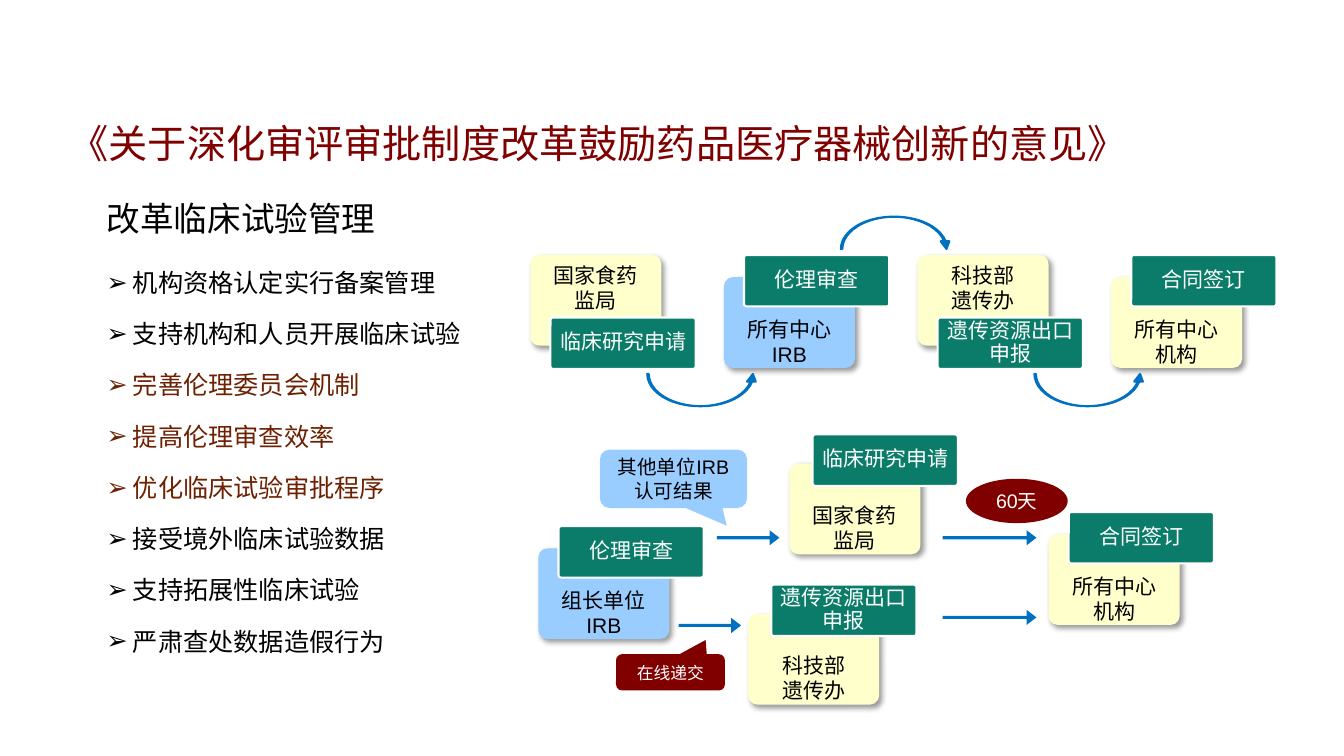
from lxml.etree import SubElement
from pptx import Presentation
from pptx.dml.color import RGBColor
from pptx.enum.shapes import MSO_SHAPE as Preset
from pptx.enum.text import MSO_ANCHOR as Anchor, PP_ALIGN as Align
from pptx.oxml.ns import qn
from pptx.util import Emu, Pt

PX = 9144  # 100 px to the inch
COLORS = {
    "maroon": "800000",
    "brown": "6D2102",
    "black": "000000",
    "white": "FFFFFF",
    "cream": "FFFFCC",
    "sky": "99CCFF",
    "teal": "0A7C69",
    "blue": "0070C0",
}
CARD_SIZE = (130, 90)
LABEL_SIZE = (144, 51)
LABEL_BELOW = (20, 62)
LABEL_ABOVE = (20, -22)
LABEL_HIGH = (23, -29)

MEASURES = [
    ("机构资格认定实行备案管理", "black"),
    ("支持机构和人员开展临床试验", "black"),
    ("完善伦理委员会机制", "brown"),
    ("提高伦理审查效率", "brown"),
    ("优化临床试验审批程序", "brown"),
    ("接受境外临床试验数据", "black"),
    ("支持拓展性临床试验", "black"),
    ("严肃查处数据造假行为", "black"),
]
CURRENT_STEPS = [
    (["国家食药", "监局"], ["临床研究申请"], "cream", LABEL_BELOW),
    (["所有中心IRB"], ["伦理审查"], "sky", LABEL_ABOVE),
    (["科技部", "遗传办"], ["遗传资源出口", "申报"], "cream", LABEL_BELOW),
    (["所有中心", "机构"], ["合同签订"], "cream", LABEL_ABOVE),
]
REFORMED_STEPS = [
    (534, 544, ["组长单位IRB"], ["伦理审查"], "sky", LABEL_ABOVE),
    (783, 460, ["国家食药", "监局"], ["临床研究申请"], "cream", LABEL_HIGH),
    (742, 609, ["科技部", "遗传办"], ["遗传资源出口", "申报"], "cream", LABEL_HIGH),
    (1040, 530, ["所有中心", "机构"], ["合同签订"], "cream", LABEL_ABOVE),
]


def rgb(color):
    return RGBColor.from_string(COLORS[color])


def box(*lengths):
    return [Emu(length * PX) for length in lengths]


def set_frame(frame, margins, anchor=Anchor.TOP):
    """Margins are left, top, right, bottom in px."""
    frame.word_wrap = True
    frame.vertical_anchor = anchor
    (frame.margin_left, frame.margin_top,
     frame.margin_right, frame.margin_bottom) = box(*margins)


def add_text(frame, text, size=15, color="black", font="Arial", align=Align.CENTER,
             before=0, after=0, spacing=1.0, bullet=None):
    """Fill the empty first paragraph, or add a further one."""
    paragraph = frame.add_paragraph() if frame.text else frame.paragraphs[0]
    paragraph.alignment = align
    paragraph.space_before, paragraph.space_after = Pt(before), Pt(after)
    paragraph.line_spacing = spacing
    if bullet:
        properties = paragraph._p.get_or_add_pPr()
        properties.set("marL", str(26 * PX))
        properties.set("indent", str(-26 * PX))
        SubElement(properties, qn("a:buFont"), typeface="Arial")
        SubElement(properties, qn("a:buChar"), char=bullet)
    run = paragraph.add_run()
    run.text = text
    run.font.size, run.font.bold, run.font.name = Pt(size), False, font
    run.font.color.rgb = rgb(color)
    SubElement(run._r.get_or_add_rPr(), qn("a:ea"), typeface=font)


def add_preset(slide, preset, bounds, fill, line=None, adjust=()):
    shape = slide.shapes.add_shape(preset, *box(*bounds))
    shape.shadow.inherit = False
    shape.fill.solid()
    shape.fill.fore_color.rgb = rgb(fill)
    if line:
        shape.line.color.rgb = rgb(line)
        shape.line.width = Pt(1.5)
    else:
        shape.line.fill.background()
    for index, value in enumerate(adjust):
        shape.adjustments[index] = value
    return shape


def cast_shadow(shape):
    effects = shape._element.spPr.find(qn("a:effectLst"))
    shadow = SubElement(effects, qn("a:outerShdw"), blurRad=str(Pt(4)), dist=str(Pt(3)),
                        dir=str(45 * 60000), algn="tl", rotWithShape="0")
    color = SubElement(shadow, qn("a:srgbClr"), val=COLORS["black"])
    SubElement(color, qn("a:alpha"), val="40000")


def add_step(slide, left, top, office, task, fill, label_offset):
    """A card for the office with the label of its task on the edge."""
    card = add_preset(slide, Preset.ROUNDED_RECTANGLE, (left, top, *CARD_SIZE), fill,
                      adjust=[0.1])
    cast_shadow(card)
    top_margin = 5 if label_offset == LABEL_BELOW else 36
    set_frame(card.text_frame, (10, top_margin, 10, 0))
    for line in office:
        add_text(card.text_frame, line)

    dx, dy = label_offset
    label = add_preset(slide, Preset.ROUNDED_RECTANGLE, (left + dx, top + dy, *LABEL_SIZE),
                       "teal", line="white", adjust=[0.05])
    set_frame(label.text_frame, (3, 2, 3, 2), Anchor.MIDDLE)
    for line in task:
        add_text(label.text_frame, line, color="white", spacing=0.9)


def add_curved_arrow(slide, left, top, over=False):
    arrow = add_preset(slide, Preset.CURVED_UP_ARROW, (left, top, 109, 32), "blue",
                       line="blue", adjust=[0.046, 0.267, 0.238])
    if over:
        arrow._element.spPr.get_or_add_xfrm().set("flipV", "1")


def add_straight_arrow(slide, left, top, width):
    add_preset(slide, Preset.RIGHT_ARROW, (left, top, width, 15), "blue",
               adjust=[0.204, 0.65])


def add_remark(slide, preset, bounds, lines, fill, size, color="white", adjust=()):
    remark = add_preset(slide, preset, bounds, fill, adjust=adjust)
    set_frame(remark.text_frame, (3, 3, 3, 3), Anchor.MIDDLE)
    for line in lines:
        add_text(remark.text_frame, line, size=size, color=color)


def add_title(slide, text):
    title = slide.shapes.title
    title.left, title.top, title.width, title.height = box(59, 115, 1087, 54)
    set_frame(title.text_frame, (10, 5, 10, 5), Anchor.MIDDLE)
    add_text(title.text_frame, text, size=28, color="maroon", align=Align.LEFT)


def add_measures(slide):
    frame = slide.shapes.add_textbox(*box(96, 180, 442, 483)).text_frame
    set_frame(frame, (10, 16, 8, 8))
    add_text(frame, "改革临床试验管理", size=24, font="Noto Sans CJK SC",
             align=Align.LEFT, after=18)
    for measure, color in MEASURES:
        add_text(frame, measure, size=18, color=color, align=Align.LEFT,
                 before=3, after=12, bullet="➢")


def add_current_process(slide):
    for index, (office, task, fill, label_offset) in enumerate(CURRENT_STEPS):
        top = 253 if label_offset == LABEL_BELOW else 275
        add_step(slide, 526 + 192 * index, top, office, task, fill, label_offset)
    for index in range(3):
        over = index == 1
        add_curved_arrow(slide, 642 + 192 * index, 215 if over else 371, over)


def add_reformed_process(slide):
    for step in REFORMED_STEPS:
        add_step(slide, *step)
    for left, top, width in [(711, 526, 62), (673, 613, 62), (935, 526, 93), (935, 605, 93)]:
        add_straight_arrow(slide, left, top, width)
    callout = Preset.ROUNDED_RECTANGULAR_CALLOUT
    add_remark(slide, Preset.OVAL, (958, 475, 101, 44), ["60天"], "maroon", 14)
    add_remark(slide, callout, (611, 649, 108, 36), ["在线递交"], "maroon", 12,
               adjust=[0.323, -0.891, 0.167])
    add_remark(slide, callout, (595, 446, 146, 58), ["其他单位IRB", "认可结果"], "sky", 14,
               color="black", adjust=[0.362, 0.804, 0.167])


def main():
    deck = Presentation()
    deck.slide_width, deck.slide_height = box(1333, 750)
    slide = deck.slides.add_slide(deck.slide_layouts[5])
    add_title(slide, "《关于深化审评审批制度改革鼓励药品医疗器械创新的意见》")
    add_measures(slide)
    add_current_process(slide)
    add_reformed_process(slide)
    deck.save("out.pptx")


if __name__ == "__main__":
    main()
